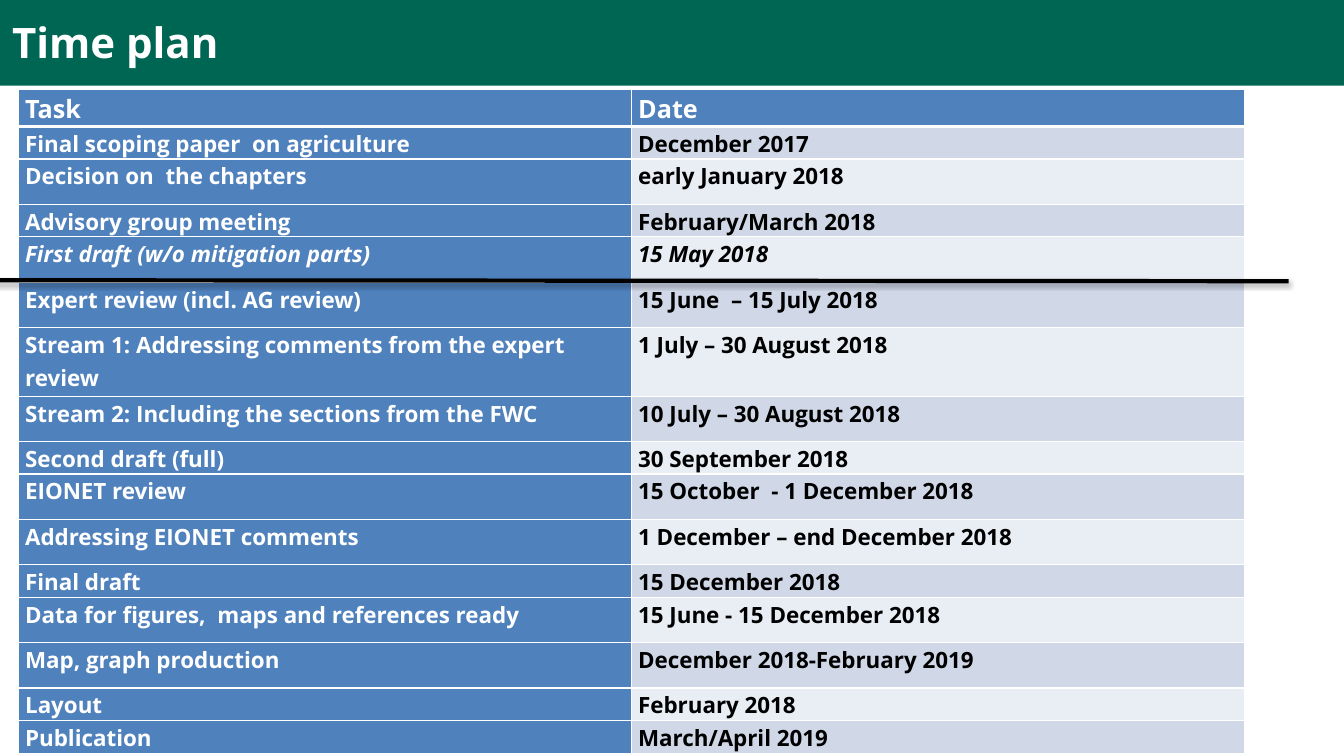
"""Builds the "Time plan" slide: a title band, a task table and a divider line."""
from lxml import etree
from pptx import Presentation
from pptx.dml.color import RGBColor
from pptx.enum.shapes import MSO_CONNECTOR, MSO_SHAPE
from pptx.enum.text import MSO_ANCHOR, PP_ALIGN
from pptx.oxml import parse_xml
from pptx.oxml.ns import nsdecls, qn
from pptx.util import Inches, Pt

TITLE = "Time plan"
HEADER = ("Task", "Date")
SNUG, ROOMY, DOUBLE = 0.32, 0.45, 0.68
PLAN = [
    ("Final scoping paper  on agriculture", "December 2017", SNUG),
    ("Decision on  the chapters", "early January 2018", ROOMY),
    ("Advisory group meeting", "February/March 2018", SNUG),
    ("First draft (w/o mitigation parts)", "15 May 2018", ROOMY),
    ("Expert review (incl. AG review)", "15 June  – 15 July 2018", ROOMY),
    ("Stream 1: Addressing comments from the expert review", "1 July – 30 August 2018", DOUBLE),
    ("Stream 2: Including the sections from the FWC", "10 July – 30 August 2018", ROOMY),
    ("Second draft (full)", "30 September 2018", SNUG),
    ("EIONET review", "15 October  - 1 December 2018", ROOMY),
    ("Addressing EIONET comments", "1 December – end December 2018", ROOMY),
    ("Final draft", "15 December 2018", SNUG),
    ("Data for figures,  maps and references ready", "15 June - 15 December 2018", ROOMY),
    ("Map, graph production", "December 2018-February 2019", ROOMY),
    ("Layout", "February 2018", SNUG),
    ("Publication", "March/April 2019", SNUG),
]
ITALIC_ROW = 4

FONT = "Open Sans"
WHITE = RGBColor(0xFF, 0xFF, 0xFF)
BLACK = RGBColor(0x00, 0x00, 0x00)
GREEN = RGBColor(0x00, 0x66, 0x54)
BLUE = RGBColor(0x4F, 0x81, 0xBD)
BANDS = (RGBColor(0xE9, 0xED, 0xF4), RGBColor(0xD0, 0xD8, 0xE8))
RECTANGLE = MSO_SHAPE.RECTANGLE
STRAIGHT = MSO_CONNECTOR.STRAIGHT
MIDDLE, TOP = MSO_ANCHOR.MIDDLE, MSO_ANCHOR.TOP
LEFT = PP_ALIGN.LEFT
TITLE_ONLY = 5

SLIDE_WIDTH, SLIDE_HEIGHT = 13.33, 7.5
BAND_HEIGHT = 0.85
TABLE_LEFT, TABLE_TOP, COLUMN_WIDTH = 0.18, 0.89, 6.08
HEADER_HEIGHT = 0.36
CELL_INSET = 0.07
DIVIDER = (-0.26, 2.78, 12.78, 2.79)


def write(paragraph, text, size, color, italic=False):
    run = paragraph.add_run()
    run.text = text
    font = run.font
    font.name, font.size, font.bold, font.italic = FONT, Pt(size), True, italic
    font.color.rgb = color


def add_borders(cell, widths):
    properties = cell._tc.get_or_add_tcPr()
    for side, width in zip("LRTB", widths):
        properties.append(parse_xml(
            f'<a:ln{side} {nsdecls("a")} w="{Pt(width)}"><a:solidFill>'
            f'<a:srgbClr val="{WHITE}"/></a:solidFill></a:ln{side}>'))


def add_title(slide):
    band = slide.shapes.add_shape(RECTANGLE, 0, 0, Inches(SLIDE_WIDTH), Inches(BAND_HEIGHT))
    band.shadow.inherit = False
    band.fill.solid()
    band.fill.fore_color.rgb = GREEN
    band.line.fill.background()
    title = slide.shapes.title
    title._element.addprevious(band._element)
    title.left, title.top = Inches(0.02), Inches(0.13)
    title.width, title.height = Inches(12.49), Inches(0.57)
    title.text_frame.vertical_anchor = MIDDLE
    paragraph = title.text_frame.paragraphs[0]
    paragraph.alignment = LEFT
    write(paragraph, TITLE, 30, WHITE)


def add_plan(slide):
    rows = [(*HEADER, HEADER_HEIGHT), *PLAN]
    table = slide.shapes.add_table(
        len(rows), len(HEADER), Inches(TABLE_LEFT), Inches(TABLE_TOP),
        Inches(COLUMN_WIDTH * len(HEADER)), Inches(sum(row[-1] for row in rows))).table
    for column in table.columns:
        column.width = Inches(COLUMN_WIDTH)
    for r, (task, date, height) in enumerate(rows):
        table.rows[r].height = Inches(height)
        for c, text in enumerate((task, date)):
            cell = table.cell(r, c)
            on_blue = r == 0 or c == 0
            add_borders(cell, (1, 1, 3 if r == 1 else 1, 3 if r == 0 else 1))
            cell.fill.solid()
            cell.fill.fore_color.rgb = BLUE if on_blue else BANDS[r % 2]
            cell.margin_left = cell.margin_right = Inches(CELL_INSET)
            cell.margin_top = cell.margin_bottom = 0
            cell.vertical_anchor = TOP
            paragraph = cell.text_frame.paragraphs[0]
            paragraph.line_spacing = 1.07
            write(paragraph, text, 18 if r == 0 else 16,
                  WHITE if on_blue else BLACK, r == ITALIC_ROW)


def add_divider(slide):
    line = slide.shapes.add_connector(STRAIGHT, *map(Inches, DIVIDER))
    line.line.color.rgb = BLACK
    line.line.width = Pt(3)
    effects = etree.SubElement(line._element.spPr, qn("a:effectLst"))
    shadow = etree.SubElement(effects, qn("a:outerShdw"), blurRad=str(Pt(3.1)),
                              dist=str(Pt(1.8)), dir="5400000", rotWithShape="0")
    color = etree.SubElement(shadow, qn("a:srgbClr"), val=str(BLACK))
    etree.SubElement(color, qn("a:alpha"), val="35000")


def main():
    deck = Presentation()
    deck.slide_width, deck.slide_height = Inches(SLIDE_WIDTH), Inches(SLIDE_HEIGHT)
    slide = deck.slides.add_slide(deck.slide_layouts[TITLE_ONLY])
    add_title(slide)
    add_plan(slide)
    add_divider(slide)
    deck.save("out.pptx")


if __name__ == "__main__":
    main()
